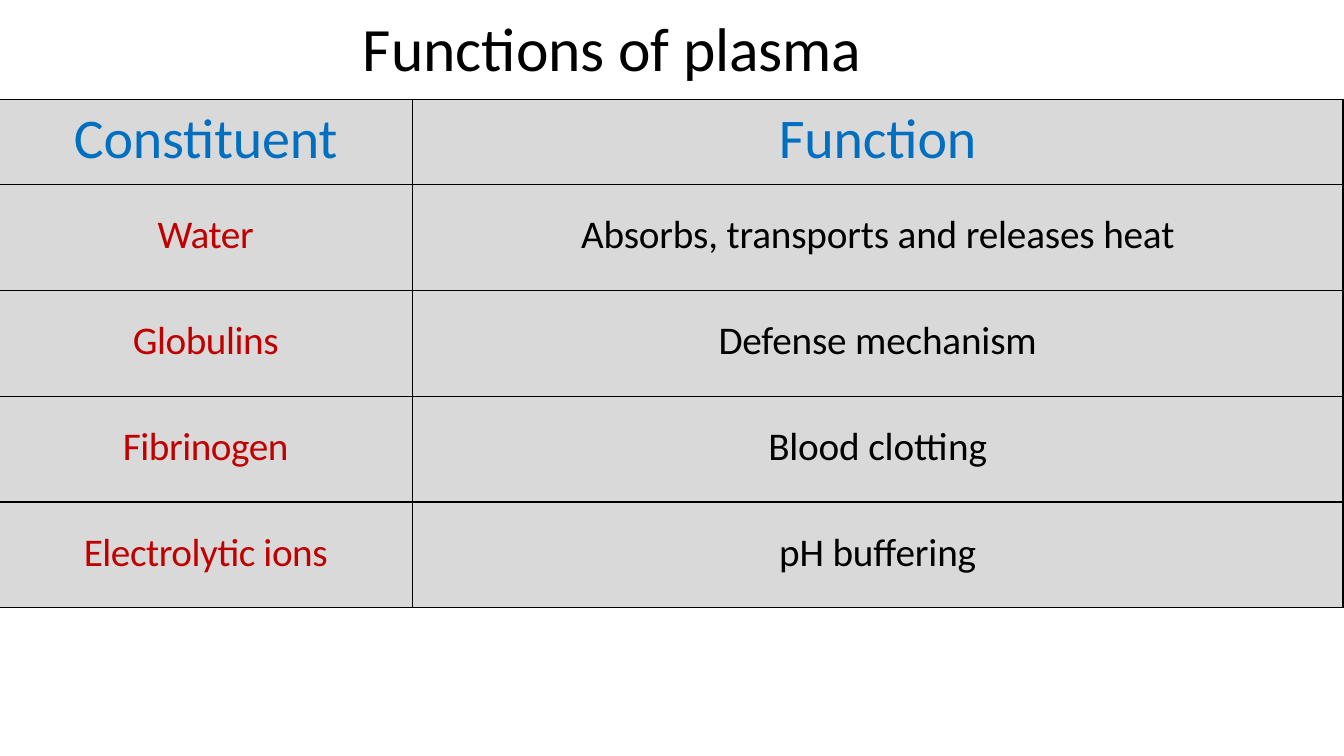
from dataclasses import dataclass

from lxml.etree import SubElement
from pptx import Presentation
from pptx.dml.color import RGBColor as Rgb
from pptx.enum.text import MSO_ANCHOR as Anchor, MSO_AUTO_SIZE as Fit, PP_ALIGN as Align
from pptx.oxml.ns import qn
from pptx.util import Inches, Pt

HUES = {"ink": "000000", "head": "006FC0", "term": "C00000", "fill": "D9D9D9"}
COLS = (4.1, 9.23)
ROWS = (0.84, 1.05, 1.05, 1.05, 1.05)


@dataclass(frozen=True)
class Style:
    size: float
    hue: str
    track: float
    lead: float = 0
    top: float = 0
    align: Align = Align.CENTER


TITLE = Style(44, "ink", -0.1, 1, 0.01, Align.LEFT)
HEAD = Style(40, "head", -0.1, 3.9, 0.05)
TERM = Style(28, "term", -0.3, 19.4, 0.27)
ROLE = Style(28, "ink", -0.1, 19.4, 0.27)

DATA = (
    ("Constituent", "Function"),
    ("Water", "Absorbs, transports and releases heat"),
    ("Globulins", "Defense mechanism"),
    ("Fibrinogen", "Blood clotting"),
    ("Electrolytic ions", "pH buffering"),
)


def put_text(frame, text: str, style: Style) -> None:
    frame.text = text
    para = frame.paragraphs[0]
    para.alignment = style.align
    para.space_before = Pt(style.lead)
    run = para.runs[0]
    run.font.name = "Calibri"
    run.font.size = Pt(style.size)
    run.font.bold = False
    run.font.color.rgb = Rgb.from_string(HUES[style.hue])
    run._r.get_or_add_rPr().set("spc", str(round(style.track * 100)))


def set_pads(item, top: float) -> None:
    item.margin_left = item.margin_right = item.margin_bottom = Inches(0)
    item.margin_top = Inches(top)


def add_edges(cell) -> None:
    props = cell._tc.get_or_add_tcPr()
    for side in ("lnL", "lnR", "lnT", "lnB"):
        line = SubElement(props, qn(f"a:{side}"), w=str(Pt(1)))
        fill = SubElement(line, qn("a:solidFill"))
        SubElement(fill, qn("a:srgbClr"), val=HUES["ink"])


def put_cell(cell, text: str, style: Style) -> None:
    set_pads(cell, style.top)
    add_edges(cell)
    cell.fill.solid()
    cell.fill.fore_color.rgb = Rgb.from_string(HUES["fill"])
    put_text(cell.text_frame, text, style)


def add_title(slide) -> None:
    title = slide.shapes.title
    title.left, title.top = Inches(3.6), Inches(0)
    title.width, title.height = Inches(6.12), Inches(0.93)
    frame = title.text_frame
    frame.vertical_anchor = Anchor.MIDDLE
    frame.auto_size = Fit.SHAPE_TO_FIT_TEXT
    set_pads(frame, TITLE.top)
    put_text(frame, "Functions of plasma", TITLE)


def add_grid(slide) -> None:
    table = slide.shapes.add_table(
        len(ROWS), len(COLS), Inches(-0.01), Inches(0.99),
        Inches(sum(COLS)), Inches(sum(ROWS)),
    ).table
    table.horz_banding = False
    table.first_row = False
    for col, width in zip(table.columns, COLS):
        col.width = Inches(width)
    for row, height in zip(table.rows, ROWS):
        row.height = Inches(height)
    for r, texts in enumerate(DATA):
        styles = (TERM, ROLE) if r else (HEAD, HEAD)
        for c, (text, style) in enumerate(zip(texts, styles)):
            put_cell(table.cell(r, c), text, style)


def main() -> None:
    deck = Presentation()
    deck.slide_width, deck.slide_height = Inches(13.33), Inches(7.5)
    slide = deck.slides.add_slide(deck.slide_layouts[5])
    add_title(slide)
    add_grid(slide)
    deck.save("out.pptx")


if __name__ == "__main__":
    main()
